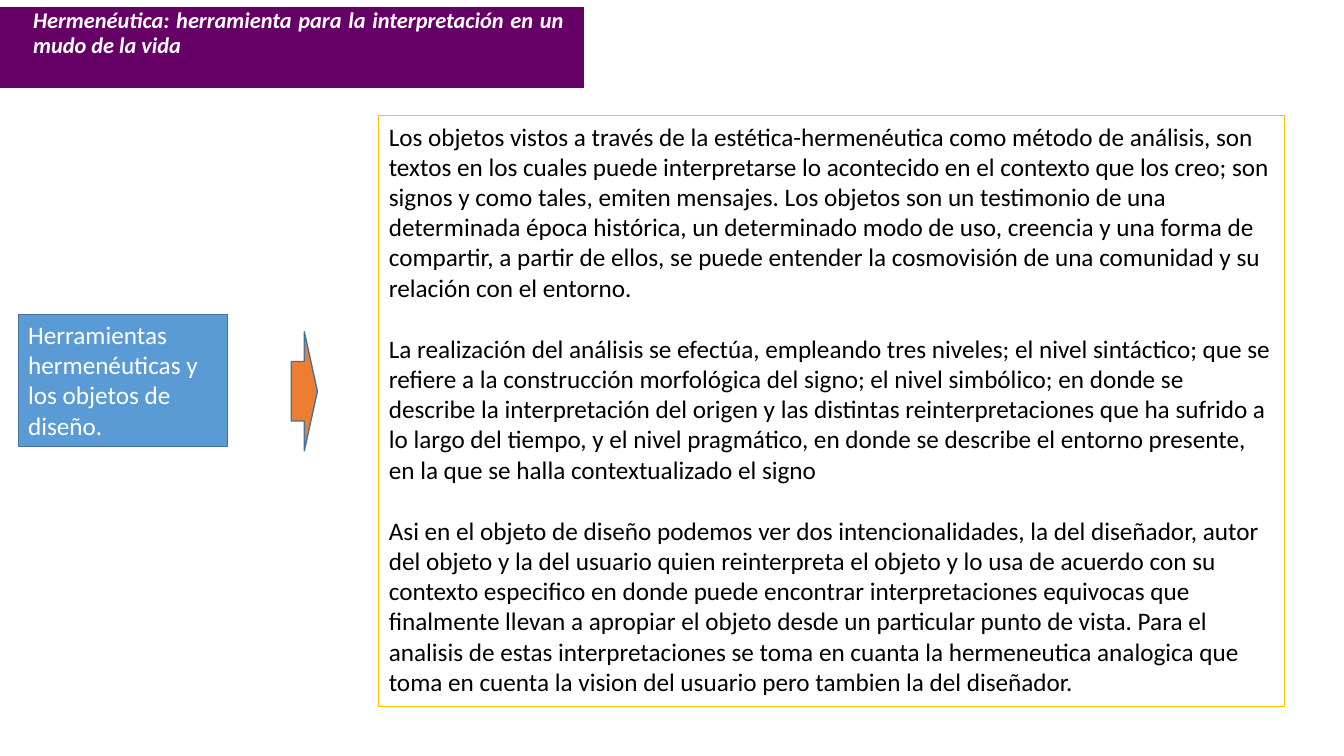
import pptx
import pptx.dml.color
import pptx.enum.shapes
import pptx.enum.text
import pptx.util

Cm = pptx.util.Cm
Pt = pptx.util.Pt
SHAPES = pptx.enum.shapes.MSO_SHAPE
ALIGN = pptx.enum.text.PP_ALIGN
ANCHOR = pptx.enum.text.MSO_ANCHOR

FONT = "Calibri"
COLOURS = {
    "purple": "660066",
    "blue": "5B9BD5",
    "outline": "43739E",
    "orange": "ED7D31",
    "gold": "FFC000",
    "white": "FFFFFF",
    "black": "000000",
}

TITLE = "Hermenéutica: herramienta para la interpretación en un mudo de la vida"
TOPIC = "Herramientas hermenéuticas y los objetos de diseño."
EXPLANATION = [
    "Los objetos vistos a través de la estética-hermenéutica como método de análisis, "
    "son textos en los cuales puede interpretarse lo acontecido en el contexto que los "
    "creo; son signos y como tales, emiten mensajes. Los objetos son un testimonio de una "
    "determinada época histórica, un determinado modo de uso, creencia y una forma de "
    "compartir, a partir de ellos, se puede entender la cosmovisión de una comunidad y su "
    "relación con el entorno.",
    "La realización del análisis se efectúa, empleando tres niveles; el nivel sintáctico; "
    "que se refiere a la construcción morfológica del signo; el nivel simbólico; en donde "
    "se describe la interpretación del origen y las distintas reinterpretaciones que ha "
    "sufrido a lo largo del tiempo, y el nivel pragmático, en donde se describe el entorno "
    "presente, en la que se halla contextualizado el signo",
    "Asi en el objeto de diseño podemos ver dos intencionalidades, la del diseñador, autor "
    "del objeto y la del usuario quien reinterpreta el objeto y lo usa de acuerdo con su "
    "contexto especifico en donde puede encontrar interpretaciones equivocas que finalmente "
    "llevan a apropiar el objeto desde un particular punto de vista. Para el analisis de "
    "estas interpretaciones se toma en cuanta la hermeneutica analogica que toma en cuenta "
    "la vision del usuario pero tambien la del diseñador.",
]


def colour(name):
    return pptx.dml.color.RGBColor.from_string(COLOURS[name])


def add_box(slide, kind, left, top, width, height, fill=None, line=None, weight=1):
    shape = slide.shapes.add_shape(kind, Cm(left), Cm(top), Cm(width), Cm(height))
    shape.shadow.inherit = False
    if fill:
        shape.fill.solid()
        shape.fill.fore_color.rgb = colour(fill)
    else:
        shape.fill.background()
    if line:
        shape.line.color.rgb = colour(line)
        shape.line.width = Pt(weight)
    else:
        shape.line.fill.background()
    return shape


def write_paragraphs(shape, texts, size, ink, anchor, align=ALIGN.LEFT, gap=0):
    frame = shape.text_frame
    frame.word_wrap = True
    frame.auto_size = pptx.enum.text.MSO_AUTO_SIZE.NONE
    frame.vertical_anchor = anchor
    for index, text in enumerate(texts):
        paragraph = frame.add_paragraph() if index else frame.paragraphs[0]
        paragraph.alignment = align
        paragraph.space_before = Pt(gap if index else 0)
        run = paragraph.add_run()
        run.text = text
        run.font.name = FONT
        run.font.size = Pt(size)
        run.font.color.rgb = colour(ink)


def add_heading(slide, left, top, width, height):
    banner = add_box(slide, SHAPES.FLOWCHART_PROCESS, left, top, width, height, "purple")
    title = slide.shapes.title
    title.left, title.top = Cm(left + 0.58), Cm(top - 0.08)
    title.width, title.height = Cm(width - 0.84), Cm(height - 0.53)
    write_paragraphs(title, [TITLE], 16, "white", ANCHOR.MIDDLE, ALIGN.JUSTIFY)
    paragraph = title.text_frame.paragraphs[0]
    paragraph.line_spacing = 0.9
    paragraph.runs[0].font.bold = True
    paragraph.runs[0].font.italic = True
    # The banner lies behind the title
    title._element.addprevious(banner._element)


def add_topic(slide, left, top, width, height):
    card = add_box(slide, SHAPES.RECTANGLE, left, top, 5.28, height, "blue", "outline")
    write_paragraphs(card, [TOPIC], 18, "white", ANCHOR.TOP)
    # Arrow towards the explanation, at the right end of the region
    add_box(slide, SHAPES.RIGHT_ARROW, left + width - 0.66, top + 0.44, 0.66, 3,
            "orange", "outline")


def add_explanation(slide, left, top, width, height):
    panel = add_box(slide, SHAPES.RECTANGLE, left, top, width, height,
                    line="gold", weight=0.75)
    write_paragraphs(panel, EXPLANATION, 18, "black", ANCHOR.TOP, gap=22)


def main():
    presentation = pptx.Presentation()
    presentation.slide_width = Cm(33.87)
    presentation.slide_height = Cm(19.05)
    title_only = presentation.slide_layouts[5]
    slide = presentation.slides.add_slide(title_only)

    add_heading(slide, 0, 0.18, 14.73, 2.03)
    add_explanation(slide, 9.55, 2.92, 22.83, 14.88)
    add_topic(slide, 0.46, 7.92, 7.54, 3.33)

    presentation.save("out.pptx")


if __name__ == "__main__":
    main()
